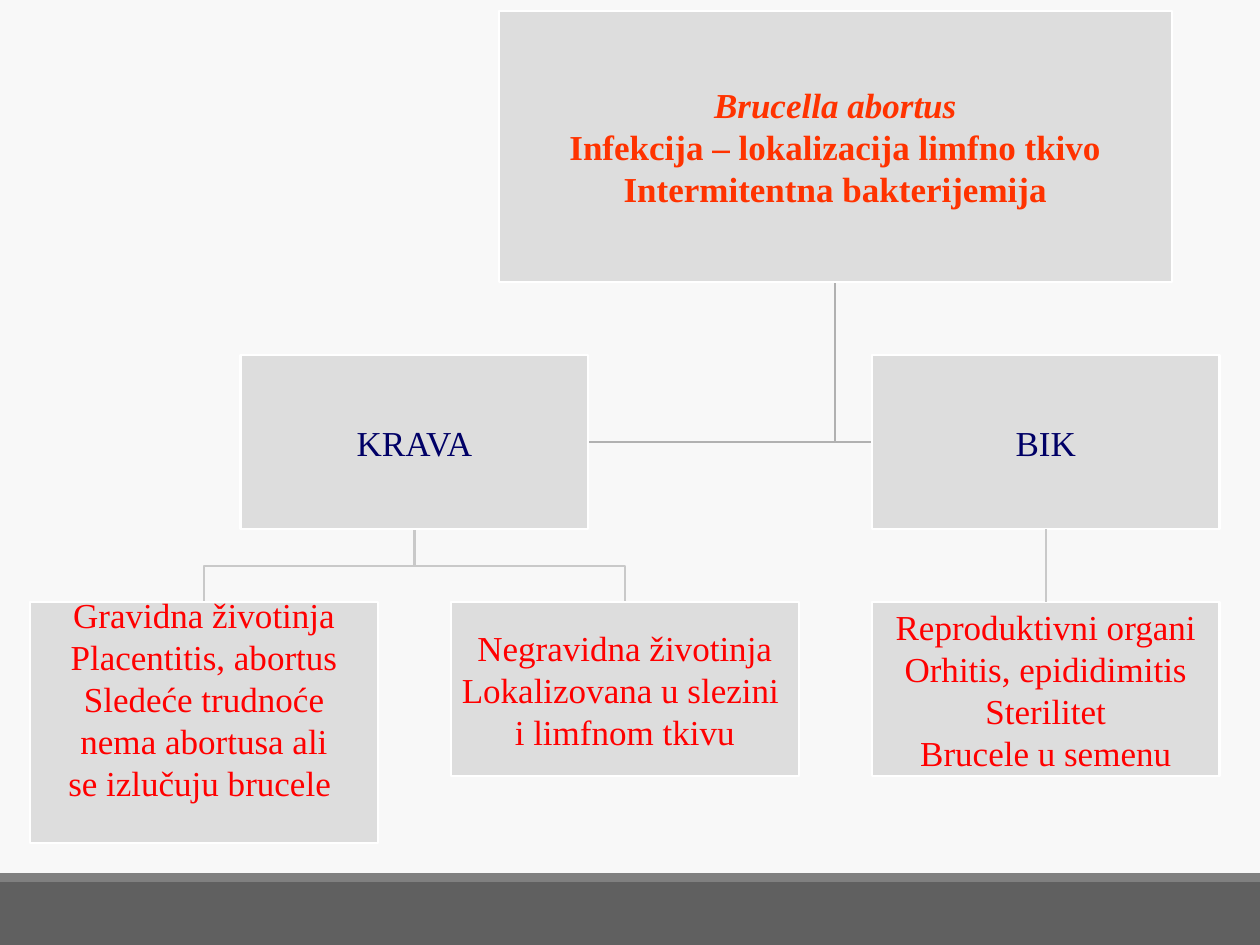
"""Build the organisation chart of Brucella abortus infection."""
from dataclasses import dataclass

from lxml import etree
from pptx import Presentation
from pptx.dml.color import RGBColor
from pptx.enum.shapes import MSO_CONNECTOR, MSO_SHAPE
from pptx.enum.text import MSO_ANCHOR, PP_ALIGN
from pptx.oxml.ns import qn
from pptx.shapes.autoshape import Shape
from pptx.slide import Slide
from pptx.util import Emu, Pt

SCALE = 9144
RECTANGLE = MSO_SHAPE.RECTANGLE
STRAIGHT = MSO_CONNECTOR.STRAIGHT
MIDDLE = MSO_ANCHOR.MIDDLE
BOTTOM = MSO_ANCHOR.BOTTOM
CENTER = PP_ALIGN.CENTER

BACKGROUND = RGBColor(0xF8, 0xF8, 0xF8)
FOOTER_DARK = RGBColor(0x60, 0x60, 0x60)
FOOTER_LIGHT = RGBColor(0x80, 0x80, 0x80)
BOX_FILL = RGBColor(0xDD, 0xDD, 0xDD)
WHITE = RGBColor(0xFF, 0xFF, 0xFF)
UPPER_LINE = RGBColor(0xB1, 0xB1, 0xB1)
LOWER_LINE = RGBColor(0xC9, 0xC9, 0xC9)
ORANGE = RGBColor(0xFF, 0x33, 0x00)
NAVY = RGBColor(0x00, 0x00, 0x66)
RED = RGBColor(0xFF, 0x00, 0x00)

FONT = "Times New Roman"
FONT_SIZE = Pt(20)
LINE_WIDTH = Pt(1.25)
INSET = 1
BOX_WIDTH, BOX_HEIGHT = 276, 138
ANIMAL_TOP, OUTCOME_TOP = 282, 478


@dataclass(frozen=True)
class Node:
    """A box of the chart, measured in px."""

    lines: tuple[str, ...]
    color: RGBColor
    left: int
    top: int
    width: int = BOX_WIDTH
    height: int = BOX_HEIGHT
    bold: bool = False
    anchor: MSO_ANCHOR = MIDDLE
    bottom_inset: int = INSET

    @property
    def center(self) -> int:
        return self.left + self.width // 2

    @property
    def middle(self) -> int:
        return self.top + self.height // 2

    @property
    def right(self) -> int:
        return self.left + self.width

    @property
    def bottom(self) -> int:
        return self.top + self.height


INFECTION = Node(
    ("Brucella abortus", "Infekcija – lokalizacija limfno tkivo", "Intermitentna bakterijemija"),
    ORANGE, 396, 9, 534, 215, bold=True)
COW = Node(("KRAVA",), NAVY, 191, ANIMAL_TOP)
BULL = Node(("BIK",), NAVY, 692, ANIMAL_TOP)
PREGNANT = Node(
    ("Gravidna životinja", "Placentitis, abortus", "Sledeće trudnoće",
     "nema abortusa ali", "se izlučuju brucele "),
    RED, 24, OUTCOME_TOP, height=191, anchor=BOTTOM, bottom_inset=31)
NOT_PREGNANT = Node(
    ("Negravidna životinja", "Lokalizovana u slezini ", "i limfnom tkivu"),
    RED, 358, OUTCOME_TOP)
ORGANS = Node(
    ("Reproduktivni organi", "Orhitis, epididimitis", "Sterilitet", "Brucele u semenu"),
    RED, 692, OUTCOME_TOP)


def px(length: int) -> Emu:
    """Turn px into EMU."""
    return Emu(length * SCALE)


def add_rectangle(slide: Slide, left: int, top: int, width: int, height: int,
                  color: RGBColor) -> Shape:
    """Add a plain filled rectangle without outline."""
    box = slide.shapes.add_shape(RECTANGLE, px(left), px(top), px(width), px(height))
    box.shadow.inherit = False
    box.fill.solid()
    box.fill.fore_color.rgb = color
    box.line.fill.background()
    return box


def add_node(slide: Slide, node: Node) -> Shape:
    """Add one chart box with its text."""
    box = add_rectangle(slide, node.left, node.top, node.width, node.height, BOX_FILL)
    box.line.color.rgb = WHITE
    box.line.width = LINE_WIDTH
    frame = box.text_frame
    frame.word_wrap = True
    frame.vertical_anchor = node.anchor
    frame.margin_left = frame.margin_right = frame.margin_top = px(INSET)
    frame.margin_bottom = px(node.bottom_inset)
    for index, line in enumerate(node.lines):
        para = frame.paragraphs[0] if index == 0 else frame.add_paragraph()
        para.text = line
        para.alignment = CENTER
        para.font.name = FONT
        para.font.size = FONT_SIZE
        para.font.bold = node.bold
        para.font.color.rgb = node.color
    return box


def add_branch(slide: Slide, points: list[tuple[int, int]], color: RGBColor) -> None:
    """Add an open bent line through the points."""
    builder = slide.shapes.build_freeform(*points[0], scale=SCALE)
    builder.add_line_segments(points[1:], close=False)
    branch = builder.convert_to_shape()
    branch.shadow.inherit = False
    branch.fill.background()
    branch.line.color.rgb = color
    branch.line.width = LINE_WIDTH


def add_link(slide: Slide, upper: Shape, lower: Shape, color: RGBColor) -> None:
    """Join the bottom of one box to the top of another."""
    link = slide.shapes.add_connector(STRAIGHT, 0, 0, 0, 0)
    link.begin_connect(upper, 2)
    link.end_connect(lower, 0)
    link.line.color.rgb = color
    link.line.width = LINE_WIDTH
    etree.SubElement(link._element.spPr, qn("a:effectLst"))


def main() -> None:
    """Build and save the deck."""
    deck = Presentation()
    deck.slide_width, deck.slide_height = px(1000), px(750)
    page = deck.slides.add_slide(deck.slide_layouts[6])
    page.background.fill.solid()
    page.background.fill.fore_color.rgb = BACKGROUND
    add_rectangle(page, 0, 700, 1000, 50, FOOTER_DARK)
    add_rectangle(page, 0, 693, 1000, 7, FOOTER_LIGHT)

    for side in (BULL.left, COW.right):
        add_branch(page, [(INFECTION.center, INFECTION.bottom),
                          (INFECTION.center, COW.middle), (side, COW.middle)], UPPER_LINE)
    fork = (COW.bottom + OUTCOME_TOP) // 2
    for outcome in (NOT_PREGNANT, PREGNANT):
        add_branch(page, [(COW.center, COW.bottom), (COW.center, fork),
                          (outcome.center, fork), (outcome.center, outcome.top)], LOWER_LINE)

    infection = add_node(page, INFECTION)
    infection.text_frame.paragraphs[0].font.italic = True
    for node in (COW, PREGNANT, NOT_PREGNANT):
        add_node(page, node)
    add_link(page, add_node(page, BULL), add_node(page, ORGANS), LOWER_LINE)
    deck.save("out.pptx")


if __name__ == "__main__":
    main()
